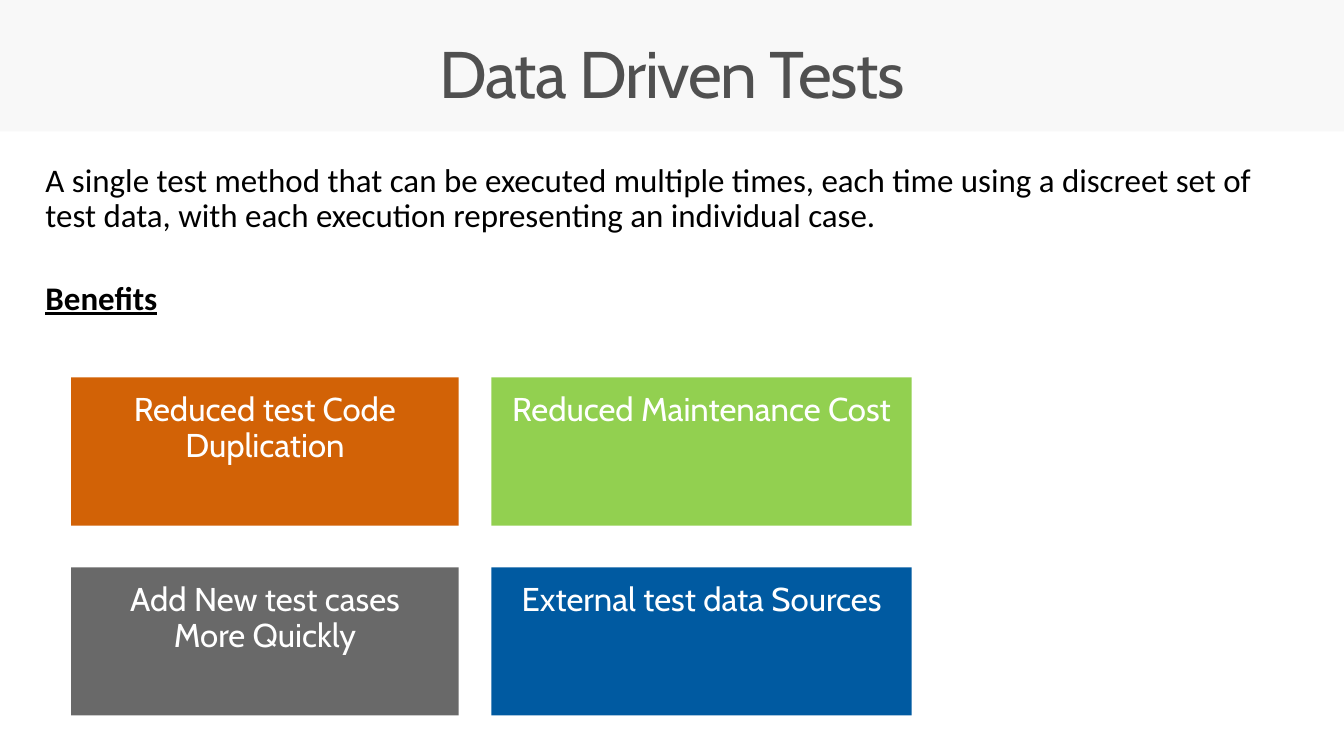
"""Build the Data Driven Tests slide with its four benefit tiles."""
from pptx import Presentation
from pptx import util as u
from pptx.dml.color import RGBColor
from pptx.enum import shapes, text

BACKGROUND = RGBColor(0xF8, 0xF8, 0xF8)
WHITE = RGBColor(0xFF, 0xFF, 0xFF)
BLACK = RGBColor(0x00, 0x00, 0x00)
TITLE_GREY = RGBColor(0x50, 0x50, 0x50)
ORANGE = RGBColor(0xD2, 0x62, 0x06)
GREEN = RGBColor(0x92, 0xD0, 0x50)
TILE_GREY = RGBColor(0x69, 0x69, 0x69)
BLUE = RGBColor(0x00, 0x5A, 0xA1)

TITLE = "Data Driven Tests"
DEFINITION = (
    "A single test method that can be executed multiple times, each time using "
    "a discreet set of test data, with each execution representing an individual case."
)
HEADING = "Benefits"
BENEFITS = [
    [("Reduced test Code Duplication", ORANGE), ("Reduced Maintenance Cost", GREEN)],
    [("Add New test cases More Quickly", TILE_GREY), ("External test data Sources", BLUE)],
]

SLIDE_WIDTH, SLIDE_HEIGHT = u.Cm(34.54), u.Cm(19.43)
BAND_HEIGHT = u.Cm(3.38)
TEXT_LEFT, TEXT_WIDTH = u.Cm(0.76), u.Cm(33.02)
TILE_LEFT, TILE_TOP = u.Cm(1.83), u.Cm(9.7)
TILE_WIDTHS = [u.Cm(9.96), u.Cm(10.8)]
TILE_HEIGHT = u.Cm(3.81)
COLUMN_GAP, ROW_GAP = u.Cm(0.84), u.Cm(1.07)


def set_frame(shape, side, edge):
    frame = shape.text_frame
    frame.word_wrap = True
    frame.vertical_anchor = text.MSO_ANCHOR.TOP
    frame.margin_left = frame.margin_right = u.Cm(side)
    frame.margin_top = frame.margin_bottom = u.Cm(edge)
    return frame


def add_words(paragraph, words, font_name, size, color, alignment):
    paragraph.alignment = alignment
    paragraph.line_spacing = 0.9
    run = paragraph.add_run()
    run.text = words
    run.font.name = font_name
    run.font.size = u.Pt(size)
    run.font.color.rgb = color
    return run


def add_rectangle(slide, left, top, width, height, color):
    shape = slide.shapes.add_shape(
        shapes.MSO_SHAPE.RECTANGLE, left, top, width, height)
    shape.shadow.inherit = False
    shape.fill.solid()
    shape.fill.fore_color.rgb = color
    shape.line.fill.background()
    return shape


def add_text_area(slide, top, height):
    box = slide.shapes.add_textbox(TEXT_LEFT, u.Cm(top), TEXT_WIDTH, u.Cm(height))
    return set_frame(box, 0.41, 0.25)


def add_tiles(slide):
    center = text.PP_ALIGN.CENTER
    for row, benefits in enumerate(BENEFITS):
        left = TILE_LEFT
        top = TILE_TOP + row * (TILE_HEIGHT + ROW_GAP)
        for (words, color), width in zip(benefits, TILE_WIDTHS):
            tile = add_rectangle(slide, left, top, width, TILE_HEIGHT, color)
            frame = set_frame(tile, 0.51, 0.41)
            add_words(frame.paragraphs[0], words, "Cabin", 24, WHITE, center)
            left += width + COLUMN_GAP


def main():
    presentation = Presentation()
    presentation.slide_width, presentation.slide_height = SLIDE_WIDTH, SLIDE_HEIGHT
    slide = presentation.slides.add_slide(presentation.slide_layouts[6])
    slide.background.fill.solid()
    slide.background.fill.fore_color.rgb = BACKGROUND
    add_rectangle(slide, 0, BAND_HEIGHT, SLIDE_WIDTH, SLIDE_HEIGHT - BAND_HEIGHT, WHITE)

    title = add_text_area(slide, 0.81, 2.54)
    run = add_words(title.paragraphs[0], TITLE, "Cabin", 48, TITLE_GREY,
                    text.PP_ALIGN.CENTER)
    run.font._element.set("spc", "-100")

    body = add_text_area(slide, 3.96, 4.6)
    left = text.PP_ALIGN.LEFT
    add_words(body.paragraphs[0], DEFINITION, "Calibri", 24, BLACK, left)
    heading = body.add_paragraph()
    heading.space_before = u.Pt(34)
    run = add_words(heading, HEADING, "Calibri", 24, BLACK, left)
    run.font.bold = run.font.underline = True

    add_tiles(slide)
    presentation.save("out.pptx")


if __name__ == "__main__":
    main()
